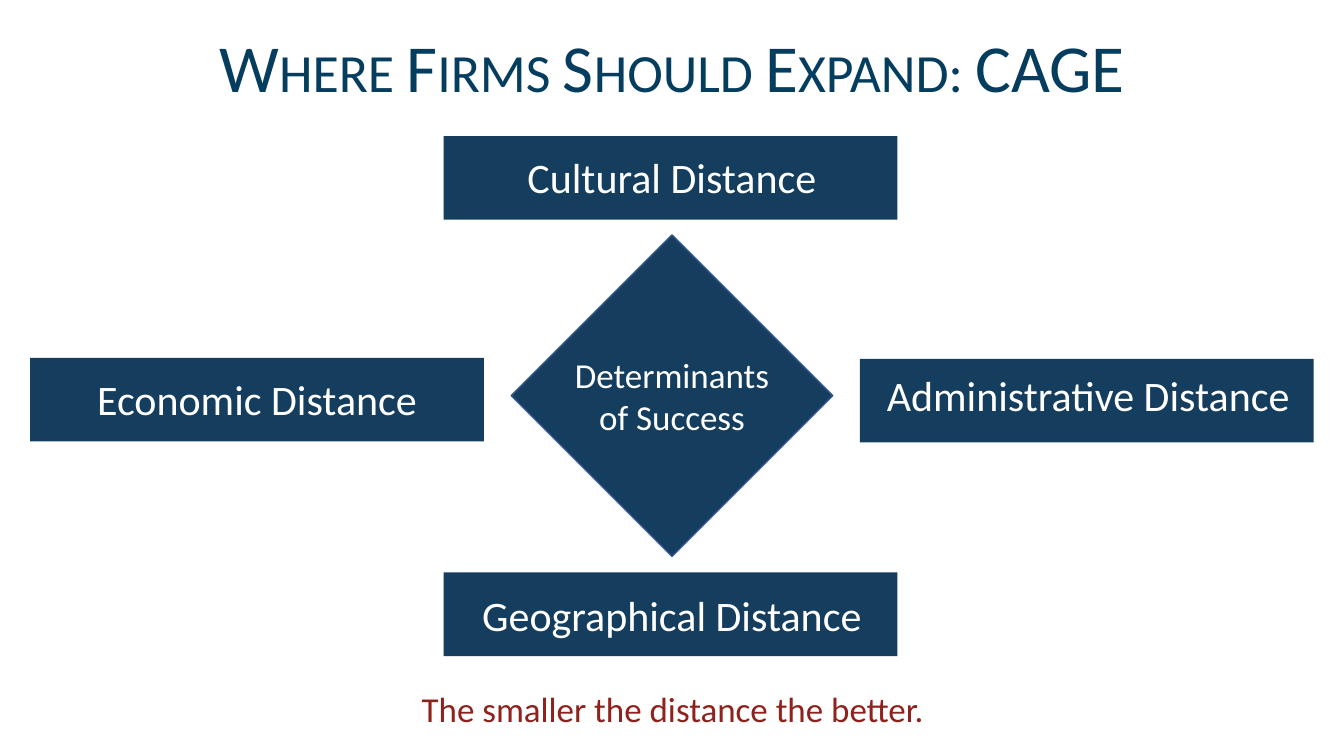
from dataclasses import dataclass

from pptx import Presentation
from pptx.dml.color import RGBColor
from pptx.enum.shapes import MSO_SHAPE as Shape
from pptx.enum.text import MSO_ANCHOR as Anchor, MSO_AUTO_SIZE as AutoSize, PP_ALIGN as Align
from pptx.slide import Slide
from pptx.util import Emu, Pt

PX = 9144  # EMU per px, 100 px to the inch
FONT = "Calibri"
NAVY = RGBColor(0x15, 0x3D, 0x5D)
OUTLINE = RGBColor(0x32, 0x54, 0x91)
WHITE = RGBColor(0xFF, 0xFF, 0xFF)
TITLE_BLUE = RGBColor(0x05, 0x3D, 0x5E)
RED = RGBColor(0x8F, 0x22, 0x1D)
BAR_WIDTH, BAR_HEIGHT = 450, 83
LABEL_HEIGHT = 61


@dataclass(frozen=True)
class Area:
    left: int
    top: int
    width: int
    height: int

    def emu(self) -> list[Emu]:
        return [Emu(n * PX) for n in (self.left, self.top, self.width, self.height)]


@dataclass(frozen=True)
class Distance:
    """A bar with its label; label values are left, top and width."""
    name: str
    bar_left: int
    bar_top: int
    label_left: int
    label_top: int
    label_width: int


DISTANCES = (
    Distance("Cultural Distance", 440, 135, 459, 145, 415),
    Distance("Economic Distance", 30, 355, 69, 366, 372),
    Distance("Geographical Distance", 440, 568, 440, 580, 453),
    Distance("Administrative Distance", 853, 356, 856, 362, 447),
)


def add_block(page: Slide, kind: Shape, area: Area, line: RGBColor | None = None) -> None:
    block = page.shapes.add_shape(kind, *area.emu())
    block.shadow.inherit = False
    block.fill.solid()
    block.fill.fore_color.rgb = NAVY
    if line is None:
        block.line.fill.background()
    else:
        block.line.color.rgb = line
        block.line.width = Pt(1)


def add_label(page: Slide, text: str, area: Area, size: int, color: RGBColor,
              anchor: Anchor = Anchor.TOP, small_caps: bool = False) -> None:
    box = page.shapes.add_textbox(*area.emu())
    frame = box.text_frame
    frame.word_wrap = True
    frame.auto_size = AutoSize.SHAPE_TO_FIT_TEXT
    frame.vertical_anchor = anchor
    para = frame.paragraphs[0]
    para.alignment = Align.CENTER
    span = para.add_run()
    span.text = text
    span.font.name = FONT
    span.font.size = Pt(size)
    span.font.color.rgb = color
    if small_caps:
        span.font._element.set("cap", "small")


def main() -> None:
    deck = Presentation()
    deck.slide_width, deck.slide_height = Emu(1333 * PX), Emu(750 * PX)
    page = deck.slides.add_slide(deck.slide_layouts[6])

    # Title
    add_label(page, "Where Firms Should Expand: CAGE", Area(0, 20, 1333, 91),
              48, TITLE_BLUE, small_caps=True)

    # Central diamond
    add_block(page, Shape.DIAMOND, Area(507, 233, 319, 319), OUTLINE)
    add_label(page, "Determinants of Success", Area(558, 345, 217, 94),
              25, WHITE, Anchor.MIDDLE)

    # Four distances around it
    for item in DISTANCES:
        add_block(page, Shape.RECTANGLE,
                  Area(item.bar_left, item.bar_top, BAR_WIDTH, BAR_HEIGHT))
        add_label(page, item.name,
                  Area(item.label_left, item.label_top, item.label_width, LABEL_HEIGHT),
                  30, WHITE)

    # Takeaway
    add_label(page, "The smaller the distance the better.", Area(213, 677, 908, 52), 25, RED)

    deck.save("out.pptx")


if __name__ == "__main__":
    main()
